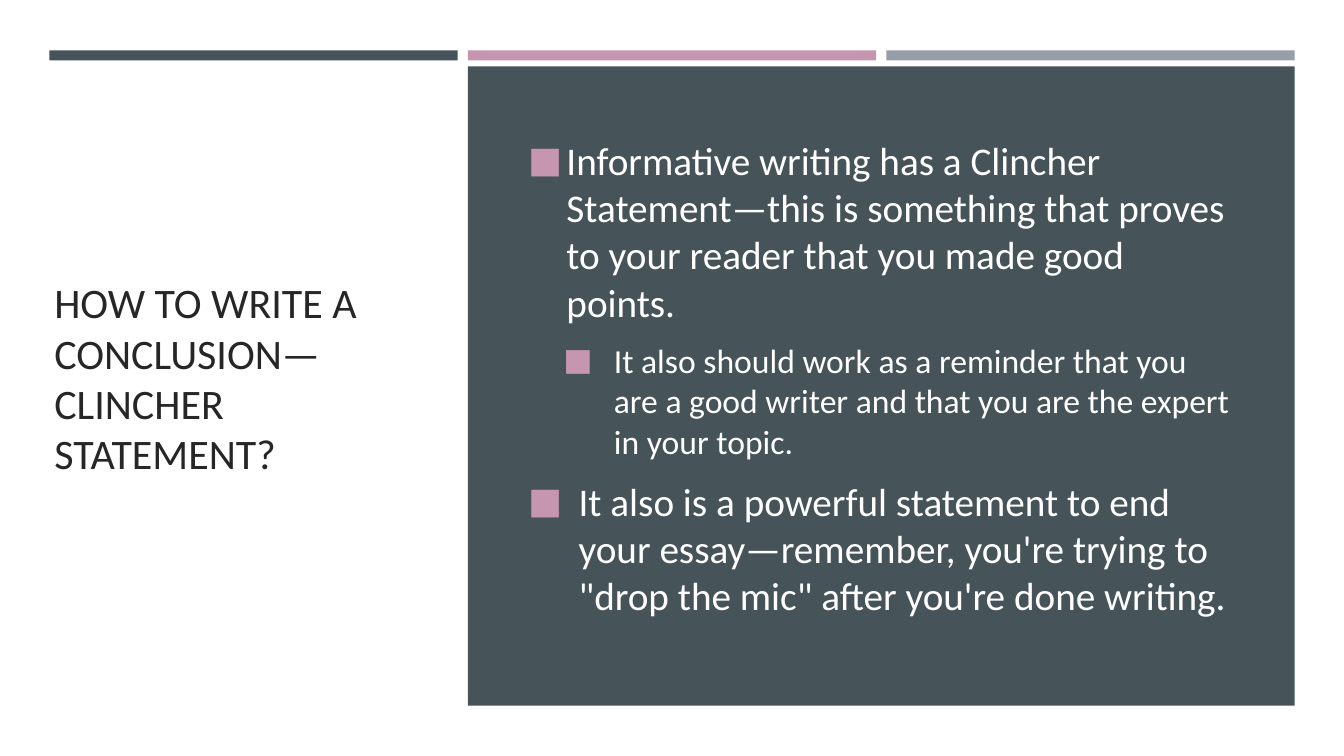
from dataclasses import dataclass

from lxml import etree
from pptx import Presentation
from pptx.dml.color import RGBColor
from pptx.enum.shapes import MSO_SHAPE
from pptx.enum.text import MSO_ANCHOR
from pptx.oxml.ns import qn
from pptx.util import Inches, Pt

RECTANGLE = MSO_SHAPE.RECTANGLE
MIDDLE = MSO_ANCHOR.MIDDLE


@dataclass(frozen=True)
class Theme:
    font: str = "Calibri"
    paper: str = "FFFFFF"
    ink: str = "262626"
    slate: str = "465359"
    pink: str = "C696B0"
    grey: str = "969FA7"
    title_size: int = 30
    point_size: int = 28
    subpoint_size: int = 24


THEME = Theme()
SLIDE_WIDTH, SLIDE_HEIGHT = 13.33, 7.5
BAR_LEFT, BAR_TOP, BAR_WIDTH, BAR_HEIGHT, BAR_STEP = 0.49, 0.5, 4.05, 0.1, 4.15
TEXT_TOP, TEXT_HEIGHT = 1.17, 5.15

TITLE = "HOW TO WRITE A CONCLUSION—CLINCHER STATEMENT?"
# Text, level, text indent in inches, hanging indent in inches, size
POINTS = [
    ("Informative writing has a Clincher Statement—this is something that proves "
     "to your reader that you made good points.", 0, 0.38, 0.38, THEME.point_size),
    ("It also should work as a reminder that you are a good writer and that you are "
     "the expert in your topic.", 1, 0.85, 0.5, THEME.subpoint_size),
    ("It also is a powerful statement to end your essay—remember, you're trying to "
     "\"drop the mic\" after you're done writing.", 0, 0.5, 0.5, THEME.point_size),
]


def add_block(page, left, top, width, height, color):
    block = page.shapes.add_shape(
        RECTANGLE, Inches(left), Inches(top), Inches(width), Inches(height))
    block.shadow.inherit = False
    block.fill.solid()
    block.fill.fore_color.rgb = RGBColor.from_string(color)
    block.line.fill.background()


def add_text_frame(page, left, width):
    box = page.shapes.add_textbox(
        Inches(left), Inches(TEXT_TOP), Inches(width), Inches(TEXT_HEIGHT))
    frame = box.text_frame
    frame.word_wrap = True
    frame.vertical_anchor = MIDDLE
    return frame


def write(para, text, *, size, color):
    span = para.add_run()
    span.text = text
    span.font.name = THEME.font
    span.font.size = Pt(size)
    span.font.color.rgb = RGBColor.from_string(color)


def set_bullet(para, indent, hanging):
    """Give the paragraph a pink square bullet with a hanging indent."""
    properties = para._p.get_or_add_pPr()
    properties.set("marL", str(Inches(indent)))
    properties.set("indent", str(-Inches(hanging)))
    color = etree.SubElement(properties, qn("a:buClr"))
    etree.SubElement(color, qn("a:srgbClr"), val=THEME.pink)
    etree.SubElement(properties, qn("a:buSzPct"), val="92000")
    etree.SubElement(properties, qn("a:buFont"), typeface=THEME.font)
    etree.SubElement(properties, qn("a:buChar"), char="■")


def add_points(page):
    frame = add_text_frame(page, 5.14, 7.22)
    for index, (text, level, indent, hanging, size) in enumerate(POINTS):
        para = frame.add_paragraph() if index else frame.paragraphs[0]
        para.level = level
        para.space_before = Pt(0.2 * size)
        para.space_after = Pt(6)
        set_bullet(para, indent, hanging)
        write(para, text, size=size, color=THEME.paper)


def main():
    deck = Presentation()
    deck.slide_width = Inches(SLIDE_WIDTH)
    deck.slide_height = Inches(SLIDE_HEIGHT)
    page = deck.slides.add_slide(deck.slide_layouts[6])

    add_block(page, 0, 0, SLIDE_WIDTH, SLIDE_HEIGHT, THEME.paper)
    title = add_text_frame(page, 0.44, 3.72)
    write(title.paragraphs[0], TITLE, size=THEME.title_size, color=THEME.ink)
    for column, color in enumerate((THEME.slate, THEME.pink, THEME.grey)):
        add_block(page, BAR_LEFT + column * BAR_STEP, BAR_TOP, BAR_WIDTH, BAR_HEIGHT, color)
    add_block(page, BAR_LEFT + BAR_STEP, 0.66, BAR_STEP + BAR_WIDTH, 6.34, THEME.slate)
    add_points(page)

    deck.save("out.pptx")


if __name__ == "__main__":
    main()
